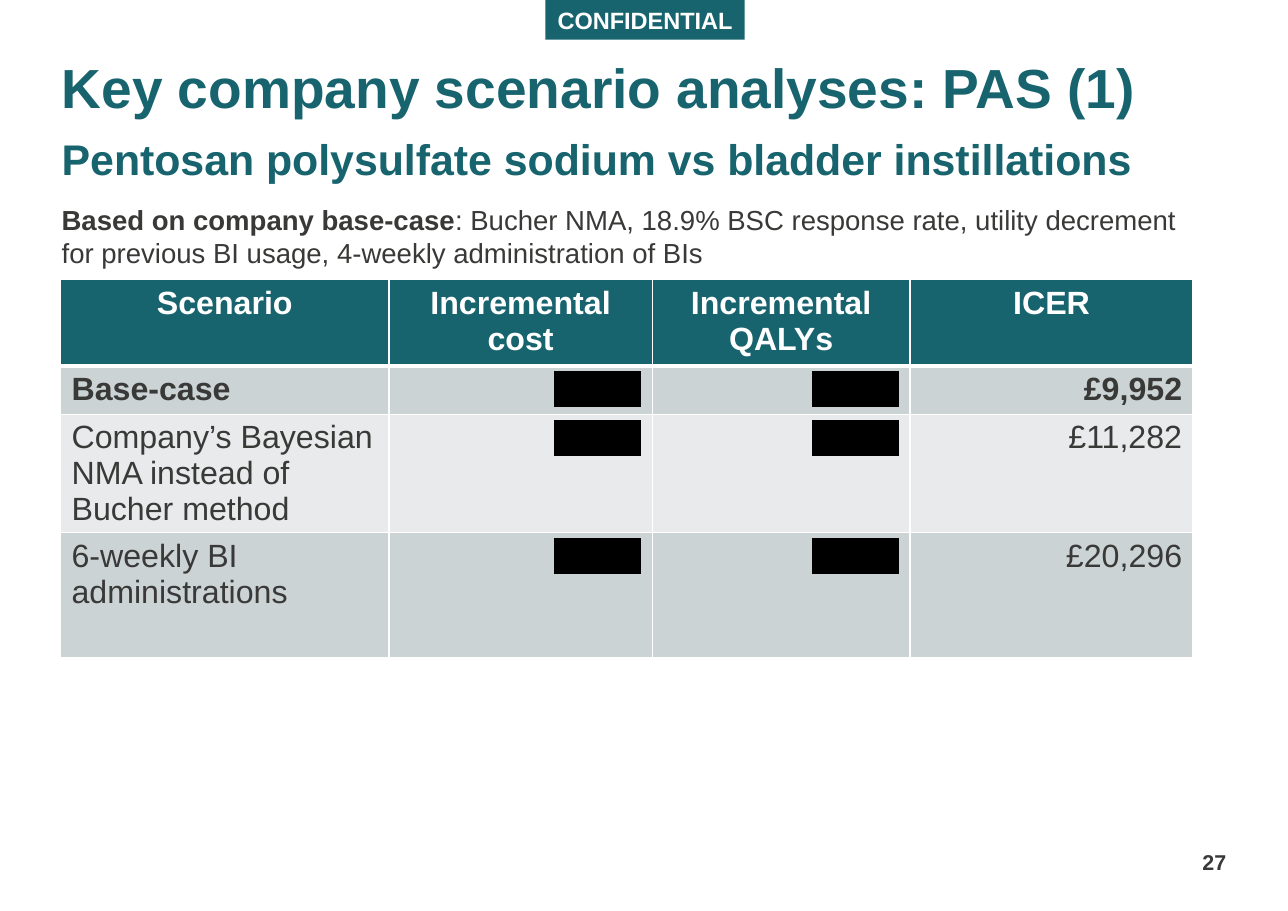
"""Build the company scenario analyses slide with its redacted results table."""
from pptx import Presentation
from pptx.dml.color import RGBColor
from pptx.enum.shapes import MSO_SHAPE
from pptx.enum.text import MSO_ANCHOR, MSO_AUTO_SIZE, PP_ALIGN
from pptx.oxml import parse_xml
from pptx.oxml.ns import nsdecls, qn
from pptx.util import Inches, Pt

LEFT, CENTER, RIGHT = PP_ALIGN.LEFT, PP_ALIGN.CENTER, PP_ALIGN.RIGHT
TOP, MIDDLE, BOTTOM = MSO_ANCHOR.TOP, MSO_ANCHOR.MIDDLE, MSO_ANCHOR.BOTTOM
RECTANGLE = MSO_SHAPE.RECTANGLE
NO_AUTOSIZE = MSO_AUTO_SIZE.NONE
TITLE_ONLY = 5

FONT = "Arial"
COLORS = {"teal": "18646E", "text": "393938", "white": "FFFFFF",
          "black": "000000", "dark_band": "CCD3D5", "light_band": "E8EAEB"}

BANNER = "CONFIDENTIAL"
TITLE = "Key company scenario analyses: PAS (1)"
SUBTITLE = "Pentosan polysulfate sodium vs bladder instillations"
BASIS = ("Based on company base-case",
         ": Bucher NMA, 18.9% BSC response rate, utility decrement for previous "
         "BI usage, 4-weekly administration of BIs")
PAGE_NUMBER = "27"
REDACTED = "*******"
ROWS = [
    ("Scenario", "Incremental cost", "Incremental QALYs", "ICER"),
    ("Base-case", REDACTED, REDACTED, "£9,952"),
    ("Company’s Bayesian NMA instead of Bucher method", REDACTED, REDACTED, "£11,282"),
    ("6-weekly BI administrations", REDACTED, REDACTED, "£20,296"),
]
COLUMN_WIDTHS = (2.98, 2.39, 2.34, 2.57)
ROW_HEIGHTS = (0.78, 0.44, 1.07, 1.13)


def style(span, size, color, bold=False):
    span.font.size = Pt(size)
    span.font.bold = bold
    span.font.name = FONT
    span.font.color.rgb = RGBColor.from_string(COLORS[color])


def prepare_frame(shape, anchor, margin=0, wrap=True):
    frame = shape.text_frame
    frame.auto_size = NO_AUTOSIZE
    frame.word_wrap = wrap
    frame.vertical_anchor = anchor
    frame.margin_left = frame.margin_right = Inches(margin)
    frame.margin_top = frame.margin_bottom = Inches(margin / 2)
    return frame


def add_text(page, area, pieces, size, anchor, align):
    box = page.shapes.add_textbox(*map(Inches, area))
    para = prepare_frame(box, anchor).paragraphs[0]
    para.alignment = align
    for words, bold in pieces:
        span = para.add_run()
        span.text = words
        style(span, size, "text", bold)


def add_banner(page):
    banner = page.shapes.add_shape(RECTANGLE, *map(Inches, (4.95, 0, 1.81, 0.36)))
    banner.shadow.inherit = False
    banner.fill.solid()
    banner.fill.fore_color.rgb = RGBColor.from_string(COLORS["teal"])
    banner.line.fill.background()
    frame = prepare_frame(banner, MIDDLE, 0.1, wrap=False)
    frame.text = BANNER
    frame.paragraphs[0].alignment = CENTER
    style(frame.paragraphs[0].runs[0], 15.4, "white", True)


def add_title(page):
    title = page.shapes.title
    title.left, title.top, title.width, title.height = map(
        Inches, (0.56, 0.5, 10.57, 1.28))
    frame = prepare_frame(title, TOP)
    frame.text = f"{TITLE}\v{SUBTITLE}"
    para = frame.paragraphs[0]
    para.alignment = LEFT
    para.line_spacing = Pt(42)
    for span, size in zip(para.runs, (36, 28)):
        style(span, size, "teal", True)


def set_borders(cell, bottom_width):
    properties = cell._tc.get_or_add_tcPr()
    widths = {"lnL": 1, "lnR": 1, "lnT": 1, "lnB": bottom_width}
    for position, (side, width) in enumerate(widths.items()):
        properties.insert(position, parse_xml(
            f'<a:{side} {nsdecls("a")} w="{Pt(width)}"><a:solidFill>'
            f'<a:srgbClr val="{COLORS["white"]}"/></a:solidFill></a:{side}>'))


def redact(span):
    fill = span._r.get_or_add_rPr().find(qn("a:solidFill"))
    fill.addnext(parse_xml(
        f'<a:highlight {nsdecls("a")}><a:srgbClr val="{COLORS["black"]}"/></a:highlight>'))


def fill_cell(cell, words, row, column):
    header = row == 0
    band = "teal" if header else ("dark_band" if row % 2 else "light_band")
    cell.fill.solid()
    cell.fill.fore_color.rgb = RGBColor.from_string(COLORS[band])
    set_borders(cell, 3 if header else 1)
    cell.text = words
    para = cell.text_frame.paragraphs[0]
    para.alignment = CENTER if header else (RIGHT if column else LEFT)
    span = para.runs[0]
    if words == REDACTED:
        style(span, 21, "black")
        redact(span)
    else:
        style(span, 21, "white" if header else "text", row < 2)


def add_results(page):
    area = (0.55, 2.54, sum(COLUMN_WIDTHS), sum(ROW_HEIGHTS))
    table = page.shapes.add_table(
        len(ROWS), len(COLUMN_WIDTHS), *map(Inches, area)).table
    for column, width in zip(table.columns, COLUMN_WIDTHS):
        column.width = Inches(width)
    for line, height in zip(table.rows, ROW_HEIGHTS):
        line.height = Inches(height)
    for row, values in enumerate(ROWS):
        for column, words in enumerate(values):
            fill_cell(table.cell(row, column), words, row, column)


def main():
    deck = Presentation()
    deck.slide_width, deck.slide_height = Inches(11.69), Inches(8.27)
    page = deck.slides.add_slide(deck.slide_layouts[TITLE_ONLY])
    add_banner(page)
    add_title(page)
    add_text(page, (10.58, 7.58, 0.55, 0.36), [(PAGE_NUMBER, True)], 14, BOTTOM, RIGHT)
    add_results(page)
    add_text(page, (0.56, 1.84, 10.26, 0.61), zip(BASIS, (True, False)), 18, TOP, LEFT)
    deck.save("out.pptx")


if __name__ == "__main__":
    main()
